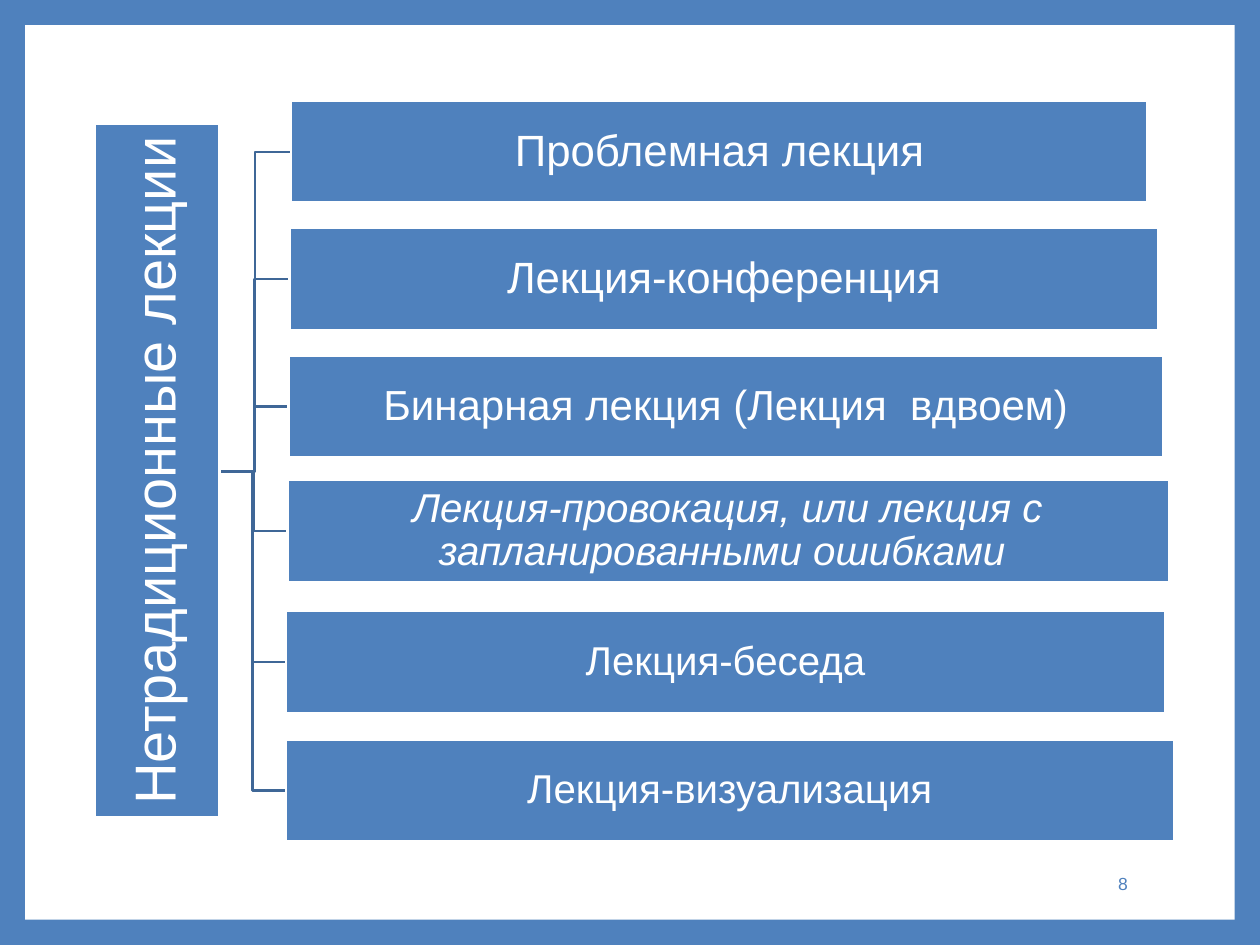
from pptx import Presentation
from pptx.dml.color import RGBColor
from pptx.enum.shapes import MSO_SHAPE as Geo
from pptx.enum.text import MSO_ANCHOR as Anchor, MSO_AUTO_SIZE as Fit, PP_ALIGN as Align
from pptx.util import Inches, Pt

BLUE = RGBColor(0x4F, 0x81, 0xBD)
DARK = RGBColor(0x3F, 0x67, 0x97)
WHITE = RGBColor(0xFF, 0xFF, 0xFF)
FONT = "Arial"
COLS, ROWS = 100, 75
HIGH = 8.1           # height of a branch bar, in rows
START = (17.4, 37.4)  # where all branches leave the root

# Branch bars: left, top, width, text size, italic, text
BARS = [
    (23.1, 8.0, 68.0, 25, False, "Проблемная лекция"),
    (23.0, 18.1, 68.9, 25, False, "Лекция-конференция"),
    (22.9, 28.2, 69.4, 24, False, "Бинарная лекция (Лекция  вдвоем)"),
    (22.8, 38.1, 70.0, 23, True,
     "Лекция-провокация, или лекция с запланированными ошибками "),
    (22.7, 48.5, 69.8, 23, False, "Лекция-беседа"),
    (22.7, 58.7, 70.5, 23, False, "Лекция-визуализация"),
]


class Board:
    """Draws on one slide, in columns and rows of its grid."""

    def __init__(self, deck):
        self.cell = deck.slide_width / COLS, deck.slide_height / ROWS
        self.slide = deck.slides.add_slide(deck.slide_layouts[5])
        self.shapes = self.slide.shapes
        back = self.slide.background.fill
        back.solid()
        back.fore_color.rgb = BLUE

    def grid(self, *nums):
        return [round(n * self.cell[i % 2]) for i, n in enumerate(nums)]

    def paint(self, shape, fill, line=None):
        shape.fill.solid()
        shape.fill.fore_color.rgb = fill
        if line is None:
            shape.line.fill.background()
        else:
            shape.line.color.rgb = line
            shape.line.width = Pt(1.5)

    def label(self, shape, text, size, color=WHITE, align=Align.CENTER,
              slant=False, inset=0.02, space=0.9):
        frame = shape.text_frame
        frame.word_wrap = True
        frame.auto_size = Fit.NONE
        frame.vertical_anchor = Anchor.MIDDLE
        frame.margin_left = frame.margin_right = Inches(inset)
        frame.margin_top = frame.margin_bottom = Inches(0.02)
        para = frame.paragraphs[0]
        para.alignment = align
        para.line_spacing = space
        run = para.add_run()
        run.text = text
        run.font.name = FONT
        run.font.size = Pt(size)
        run.font.italic = slant
        run.font.color.rgb = color

    def rect(self, box, fill, line=None):
        shape = self.shapes.add_shape(Geo.RECTANGLE, *self.grid(*box))
        shape.shadow.inherit = False
        self.paint(shape, fill, line)
        return shape

    def title(self, box, turn, text, size):
        shape = self.shapes.title
        shape.left, shape.top, shape.width, shape.height = self.grid(*box)
        shape.rotation = turn
        self.paint(shape, BLUE, WHITE)
        self.label(shape, text, size)
        # Bring the title in front of what is drawn so far
        shape.element.getparent().append(shape.element)

    def elbow(self, start, end):
        mid = (start[0] + end[0]) / 2
        line = self.shapes.build_freeform(*self.grid(*start))
        turns = [(mid, start[1]), (mid, end[1]), end]
        line.add_line_segments([self.grid(*p) for p in turns], close=False)
        shape = line.convert_to_shape()
        shape.shadow.inherit = False
        shape.fill.background()
        shape.line.color.rgb = DARK
        shape.line.width = Pt(1.5)

    def note(self, box, text, size):
        shape = self.shapes.add_textbox(*self.grid(*box))
        self.label(shape, text, size, BLUE, Align.RIGHT, inset=0.1, space=1)


def main():
    deck = Presentation()
    deck.slide_width, deck.slide_height = Inches(10), Inches(7.5)
    board = Board(deck)

    # White panel and slide number
    board.rect((2, 2, 96, 71), WHITE)
    board.note((76.5, 68.1, 14, 4), "8", 10)

    # Branch lines, from the root to the middle of each bar
    for left, top, *_ in reversed(BARS):
        board.elbow(START, (left, top + HIGH / 2))

    # Root, turned to read upwards
    board.title((-15.1, 32.4, 55.1, 9.9), 270, "Нетрадиционные лекции", 33)

    # Branch bars
    for left, top, wide, size, slant, text in BARS:
        bar = board.rect((left, top, wide, HIGH), BLUE, WHITE)
        board.label(bar, text, size, slant=slant)

    deck.save("out.pptx")


if __name__ == "__main__":
    main()
